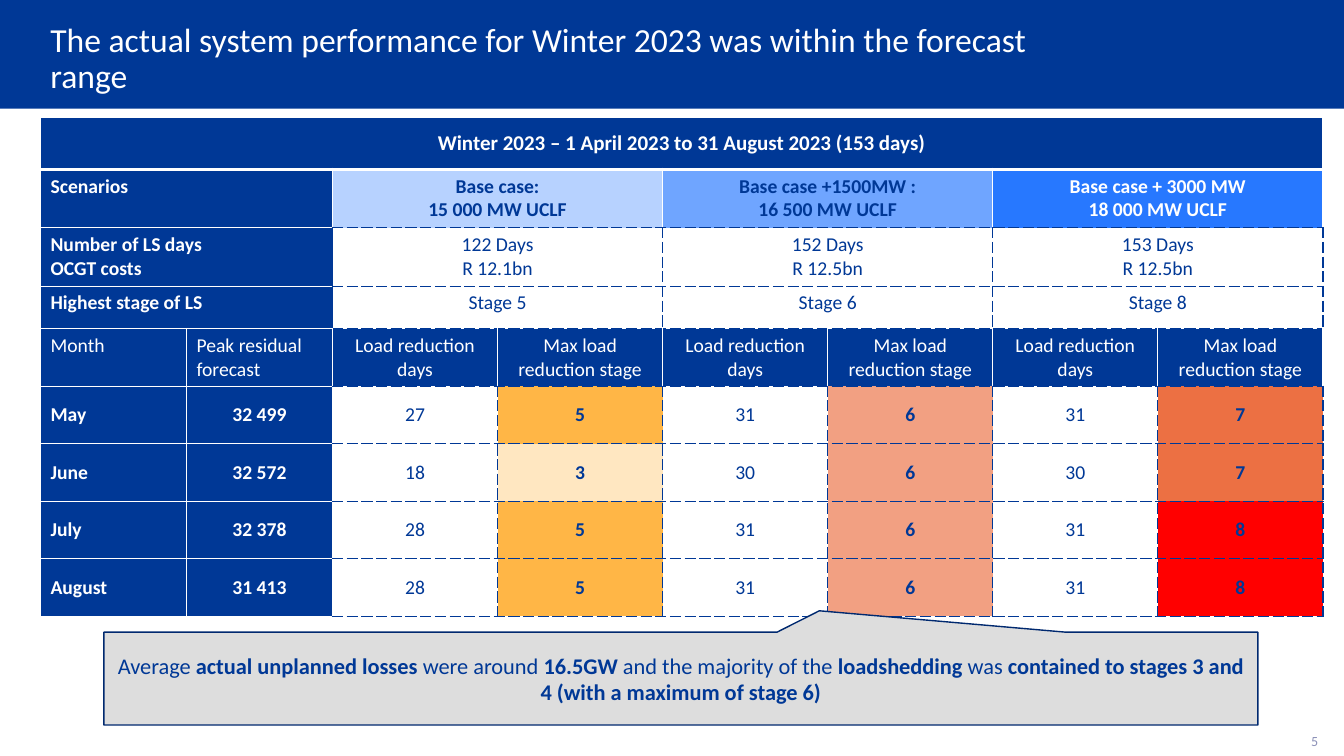
from lxml import etree
from pptx import Presentation
from pptx import util as u
from pptx.dml.color import RGBColor
from pptx.enum import shapes, text
from pptx.oxml import ns

NAVY = RGBColor(0x00, 0x38, 0x96)
DEEP = RGBColor(0x00, 0x29, 0x6F)
WHITE = RGBColor(0xFF, 0xFF, 0xFF)
GREY = RGBColor(0xDD, 0xDD, 0xDD)
MUTED = RGBColor(0x8C, 0x91, 0xB8)
STAGE_FILLS = {
    "3": RGBColor(0xFF, 0xE7, 0xC1),
    "5": RGBColor(0xFF, 0xB6, 0x46),
    "6": RGBColor(0xF2, 0xA0, 0x82),
    "7": RGBColor(0xEC, 0x70, 0x43),
    "8": RGBColor(0xFF, 0x00, 0x00),
}
BORDERS = {"W": (WHITE, 1, "solid"), "T": (WHITE, 3, "solid"), "D": (NAVY, 1, "sysDash")}
SCENARIOS = [
    ("Base case:\n15 000 MW UCLF", RGBColor(0xB7, 0xD2, 0xFF), NAVY, "122 Days\nR 12.1bn", "Stage 5"),
    ("Base case +1500MW :\n16 500 MW UCLF", RGBColor(0x6F, 0xA5, 0xFF), NAVY, "152 Days\nR 12.5bn", "Stage 6"),
    ("Base case + 3000 MW\n18 000 MW UCLF", RGBColor(0x27, 0x78, 0xFF), WHITE, "153 Days\nR 12.5bn", "Stage 8"),
]
MONTHS = [
    ("May", "32 499", "27", "5", "31", "6", "31", "7"),
    ("June", "32 572", "18", "3", "30", "6", "30", "7"),
    ("July", "32 378", "28", "5", "31", "6", "31", "8"),
    ("August", "31 413", "28", "5", "31", "6", "31", "8"),
]
CENTER, RIGHT, LEFT = text.PP_ALIGN.CENTER, text.PP_ALIGN.RIGHT, text.PP_ALIGN.LEFT
MIDDLE, TOP = text.MSO_ANCHOR.MIDDLE, text.MSO_ANCHOR.TOP


class Deck:
    """Holds the type style and the current slide, and adds elements to it."""

    def __init__(self, s, font="Calibri"):
        self.s = s
        self.font = font

    def set_text(self, tf, paras, color, size, align=LEFT, anchor=MIDDLE, spacing=1.0):
        for k, v in {"word_wrap": True, "vertical_anchor": anchor}.items():
            setattr(tf, k, v)
        for i, runs in enumerate(paras):
            p = tf.add_paragraph() if i else tf.paragraphs[0]
            for k, v in {"alignment": align, "line_spacing": spacing}.items():
                setattr(p, k, v)
            for words, bold in runs:
                r = p.add_run()
                r.text = words
                for k, v in {"name": self.font, "size": u.Pt(size), "bold": bold}.items():
                    setattr(r.font, k, v)
                r.font.color.rgb = color

    def shape(self, kind, box, fill, line=None):
        sp = self.s.shapes.add_shape(kind, *map(u.Cm, box))
        sp.shadow.inherit = False
        sp.fill.solid()
        sp.fill.fore_color.rgb = fill
        if line is None:
            sp.line.fill.background()
        else:
            sp.line.color.rgb = line
            sp.line.width = u.Pt(1)
        return sp

    def label(self, box, words, color, size, **style):
        sp = self.s.shapes.add_textbox(*map(u.Cm, box))
        self.set_text(sp.text_frame, [[(words, False)]], color, size, **style)

    def table(self, left, top, widths, heights):
        sp = self.s.shapes.add_table(len(heights), len(widths), u.Cm(left), u.Cm(top),
                                     u.Cm(sum(widths)), u.Cm(sum(heights)))
        self.tbl = sp.table
        for k in ("first_row", "horz_banding"):
            setattr(self.tbl, k, False)
        for col, w in zip(self.tbl.columns, widths):
            col.width = u.Cm(w)
        for row, h in zip(self.tbl.rows, heights):
            row.height = u.Cm(h)

    def cell(self, row, col, words, fill=NAVY, color=WHITE, bold=True, borders="WWWW",
             span=1, size=14, align=CENTER, anchor=TOP):
        cell = self.tbl.cell(row, col)
        if span > 1:
            cell.merge(self.tbl.cell(row, col + span - 1))
        for c in range(col, col + span):
            part = self.tbl.cell(row, c)
            self.edges(part, borders)
            part.fill.solid()
            part.fill.fore_color.rgb = fill
        paras = [[(line, bold)] for line in words.split("\n")]
        self.set_text(cell.text_frame, paras, color, size, align)
        cell.vertical_anchor = anchor

    def edges(self, cell, borders):
        tc_pr = cell._tc.get_or_add_tcPr()
        left, top, right, bottom = borders
        for side, code in zip("LRTB", (left, right, top, bottom)):
            color, width, dash = BORDERS[code]
            ln = etree.SubElement(tc_pr, ns.qn("a:ln" + side), w=str(u.Pt(width)))
            fill = etree.SubElement(ln, ns.qn("a:solidFill"))
            etree.SubElement(fill, ns.qn("a:srgbClr"), val=str(color))
            etree.SubElement(ln, ns.qn("a:prstDash"), val=dash)


def add_forecast(d):
    """Fill the winter forecast table."""
    d.table(1.02, 2.95, [3.68] * 2 + [4.16] * 6, [1.32, 1.47, 1.47, 1.07] + [1.45] * 5)
    d.cell(0, 0, "Winter 2023 – 1 April 2023 to 31 August 2023 (153 days)",
           borders="WWWT", span=8, size=15, anchor=MIDDLE)
    heads = ["Scenarios", "Number of LS days\nOCGT costs", "Highest stage of LS"]
    for row, head in enumerate(heads, 1):
        d.cell(row, 0, head, borders="WWWW" if row == 1 else "WWDW", span=2, align=LEFT)
    for i, (name, fill, color, days, stage) in enumerate(SCENARIOS):
        col = 2 + 2 * i
        d.cell(1, col, name, fill, color, borders="WWWD", span=2)
        for row, words in enumerate((days, stage), 2):
            d.cell(row, col, words, WHITE, NAVY, False, "DDDD", span=2)
        for c, words in enumerate(("Load reduction days", "Max load reduction stage"), col):
            d.cell(4, c, words, bold=False, borders="WDWD")
    for col, words in enumerate(("Month", "Peak residual forecast")):
        d.cell(4, col, words, bold=False, align=LEFT)
    for row, (month, peak, *values) in enumerate(MONTHS, 5):
        d.cell(row, 0, month, align=LEFT, anchor=MIDDLE)
        d.cell(row, 1, peak, anchor=MIDDLE)
        for col, value in enumerate(values, 2):
            is_stage = col % 2 == 1
            d.cell(row, col, value, STAGE_FILLS[value] if is_stage else WHITE, NAVY, is_stage,
                   "WDDD" if col == 2 else "DDDD", anchor=MIDDLE)


def add_callout(d):
    """Add the takeaway that points at the table."""
    sp = d.shape(shapes.MSO_SHAPE.RECTANGULAR_CALLOUT, (2.62, 15.93, 29.08, 2.34), GREY, DEEP)
    sp.adjustments[0], sp.adjustments[1] = 0.12, -0.73
    runs = [("Average ", False), ("actual unplanned losses ", True), ("were around ", False),
            ("16.5GW ", True), ("and the majority of the ", False), ("loadshedding ", True),
            ("was ", False), ("contained to stages 3 and 4 (with a maximum of stage 6)", True)]
    d.set_text(sp.text_frame, [runs], NAVY, 16, CENTER)


def main():
    """Build the slide and save it."""
    prs = Presentation()
    prs.slide_width, prs.slide_height = u.Cm(33.87), u.Cm(19.05)
    d = Deck(prs.slides.add_slide(prs.slide_layouts[6]))
    d.shape(shapes.MSO_SHAPE.RECTANGLE, (0, 0, 33.87, 2.74), NAVY)
    d.label((1.02, 0.58, 26.42, 1.85),
            "The actual system performance for Winter 2023 was within the forecast range",
            WHITE, 24, spacing=0.9)
    add_forecast(d)
    add_callout(d)
    d.label((30.78, 18.06, 2.69, 1.22), "5", MUTED, 10, align=RIGHT)
    prs.save("out.pptx")


if __name__ == "__main__":
    main()
